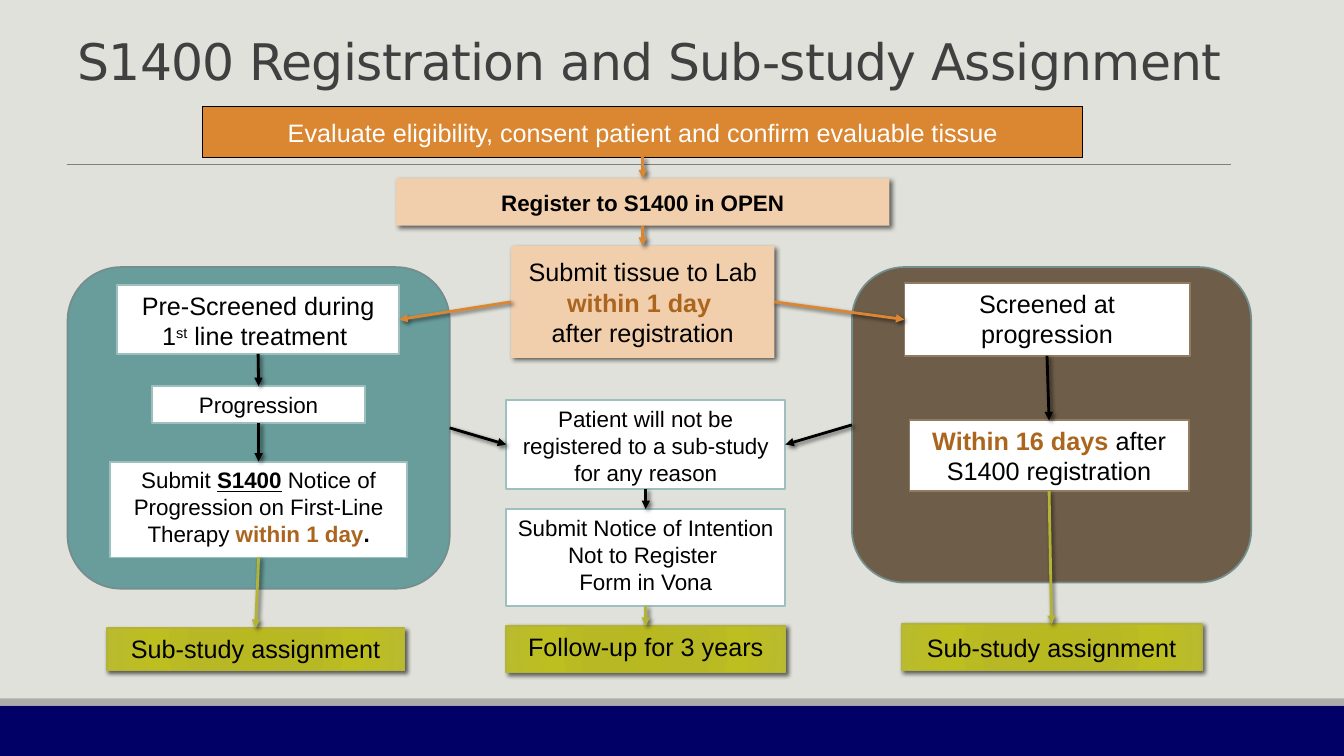
from pptx import Presentation
from pptx.dml.color import RGBColor
from pptx.enum.shapes import MSO_CONNECTOR, MSO_SHAPE
from pptx.enum.text import MSO_ANCHOR, PP_ALIGN
from pptx.oxml import parse_xml
from pptx.oxml.ns import nsdecls
from pptx.util import Pt

PX = 9144
TOP, LEFT, BOTTOM, RIGHT = range(4)
BLACK, WHITE, RUST = "000000", "FFFFFF", "AB651E"
ORANGE, PEACH, OLIVE, SEA, TAN = "DB8631", "F1CFAD", "B3B435", "9DBFBE", "927C61"
GREEN_STOPS = [(0, "B8B920"), (34, "B7B823"), (70, "BDBE20"), (100, "B9BA2F")]


def color(code):
    return RGBColor.from_string(code)


def add_shadow(properties, blur):
    properties.append(parse_xml(
        f'<a:effectLst {nsdecls("a")}><a:outerShdw blurRad="{Pt(blur)}" dist="{Pt(2)}" '
        'dir="2700000" algn="tl" rotWithShape="0"><a:srgbClr val="000000">'
        '<a:alpha val="60000"/></a:srgbClr></a:outerShdw></a:effectLst>'))


deck = Presentation()
deck.slide_width, deck.slide_height = 1333 * PX, 750 * PX
page = deck.slides.add_slide(deck.slide_layouts[5])
page.background.fill.solid()
page.background.fill.fore_color.rgb = color("E1E1DB")

title = page.shapes.title
title.left, title.top, title.width, title.height = 67 * PX, 21 * PX, 1225 * PX, 74 * PX
title.text_frame.text = "S1400 Registration and Sub-study Assignment"
title.text_frame.vertical_anchor = MSO_ANCHOR.BOTTOM
title.text_frame.word_wrap = True
para = title.text_frame.paragraphs[0]
para.alignment = PP_ALIGN.LEFT
para.line_spacing = 0.85
span = para.runs[0]
span.font.name, span.font.size = "DejaVu Sans", Pt(36)
span.font.color.rgb = color("404040")
span.font._element.set("spc", "-50")

rule = page.shapes.add_connector(MSO_CONNECTOR.STRAIGHT, 66 * PX, 163 * PX, 1221 * PX, 163 * PX)
rule.line.color.rgb = color("808080")
rule.line.width = Pt(0.5)
rule._element.spPr.append(parse_xml(f'<a:effectLst {nsdecls("a")}/>'))

RECT, ROUND = MSO_SHAPE.RECTANGLE, MSO_SHAPE.ROUNDED_RECTANGLE
panels = [
    ("footer", RECT, (0, 700, 1333, 50), "000066", None),
    ("footer edge", RECT, (0, 693, 1333, 7), "ACADA8", None),
    ("screened panel", ROUND, (845, 265, 396, 313), "6E5D49", "748D8D"),
    ("pre-screened panel", ROUND, (67, 265, 379, 319), "689D9B", "748D8D"),
]
nodes = {}
for name, kind, area, fill, edge in panels:
    panel = page.shapes.add_shape(kind, *[length * PX for length in area])
    panel.shadow.inherit = False
    panel.fill.solid()
    panel.fill.fore_color.rgb = color(fill)
    if edge:
        panel.line.color.rgb = color(edge)
        panel.line.width = Pt(1.25)
    else:
        panel.line.fill.background()
    nodes[name] = panel

styles = {
    "start": (ORANGE, BLACK, 0.75, 0),
    "step": (PEACH, None, 0, 3.5),
    "sea": (WHITE, SEA, 1.25, 0),
    "tan": (WHITE, TAN, 1.25, 0),
    "result": (None, OLIVE, 1, 3),
}
boxes = [
    ("evaluate", "start", (201, 106, 873, 50), 18, 10,
     [("Evaluate eligibility, consent patient and confirm evaluable tissue", "white")]),
    ("register", "step", (393, 177, 489, 47), 16, 10, [("Register to S1400 in OPEN", "bold")]),
    ("tissue", "step", (507, 244, 261, 111), 18, 10,
     [("Submit tissue to Lab ", ""), ("within 1 day \n", "bold rust"), ("after registration", "")]),
    ("screened result", "result", (894, 619, 298, 46), 18, 10, [("Sub-study assignment", "")]),
    ("16 days", "tan", (902, 417, 277, 70), 18, 5,
     [("Within 16 days ", "bold rust"), ("after S1400 registration", "")]),
    ("pre-screened", "sea", (116, 283, 280, 68), 18, 0,
     [("Pre-Screened during 1", ""), ("st", "super"), (" line treatment ", "")]),
    ("progression", "sea", (151, 383, 211, 37), 16, 0, [("Progression", "")]),
    ("notice", "sea", (109, 458, 295, 95), 16, 0,
     [("Submit ", ""), ("S1400", "bold underline"),
      (" Notice of Progression on First-Line Therapy ", ""),
      ("within 1 day", "bold rust"), (".", "bold")]),
    ("not registered", "sea", (502, 397, 277, 88), 16, 0,
     [("Patient will not be registered to a sub-study for any reason", "")]),
    ("intention", "sea", (502, 505, 277, 96), 16, 0,
     [("Submit Notice of Intention Not to Register \nForm in Vona", "")]),
    ("pre-screened result", "result", (106, 623, 295, 42), 18, 0, [("Sub-study assignment", "")]),
    ("screened", "tan", (897, 281, 283, 72), 18, 0, [("Screened at progression", "")]),
    ("follow-up", "result", (502, 621, 277, 46), 18, 0, [("Follow-up for 3 years", "")]),
]
for name, style, area, size, middle_inset, spans in boxes:
    fill, edge, weight, blur = styles[style]
    box = page.shapes.add_shape(RECT, *[length * PX for length in area])
    nodes[name] = box
    if fill:
        box.fill.solid()
        box.fill.fore_color.rgb = color(fill)
    else:
        stops = "".join(f'<a:gs pos="{place * 1000}"><a:srgbClr val="{code}"/></a:gs>'
                        for place, code in GREEN_STOPS)
        box._element.spPr.insert(2, parse_xml(
            f'<a:gradFill {nsdecls("a")} rotWithShape="1"><a:gsLst>{stops}</a:gsLst>'
            '<a:path path="circle"><a:fillToRect l="100000" t="100000" r="100000" b="100000"/>'
            '</a:path></a:gradFill>'))
    if edge:
        box.line.color.rgb = color(edge)
        box.line.width = Pt(weight)
    else:
        box.line.fill.background()
    if blur:
        add_shadow(box._element.spPr, blur)
    else:
        box.shadow.inherit = False
    frame = box.text_frame
    frame.word_wrap = True
    frame.margin_left = frame.margin_right = 10 * PX
    frame.margin_top = frame.margin_bottom = (middle_inset or 5) * PX
    frame.vertical_anchor = MSO_ANCHOR.MIDDLE if middle_inset else MSO_ANCHOR.TOP
    para = frame.paragraphs[0]
    para.alignment = PP_ALIGN.CENTER
    if not middle_inset:
        para.space_after = Pt(10)
    for text, look in spans:
        for number, line in enumerate(text.split("\n")):
            if number:
                para.add_line_break()
            if not line:
                continue
            span = para.add_run()
            span.text = line
            span.font.name, span.font.size = "Arial", Pt(size)
            span.font.bold = "bold" in look
            span.font.underline = "underline" in look
            span.font.color.rgb = color(
                RUST if "rust" in look else WHITE if "white" in look else BLACK)
            if "super" in look:
                span.font._element.set("baseline", "30000")

arrows = [
    ("evaluate", BOTTOM, "register", TOP, ORANGE),
    ("register", BOTTOM, "tissue", TOP, ORANGE),
    ("tissue", LEFT, "pre-screened", RIGHT, ORANGE),
    ("tissue", RIGHT, "screened", LEFT, ORANGE),
    ("pre-screened", BOTTOM, "progression", TOP, BLACK),
    ("progression", BOTTOM, "notice", TOP, BLACK),
    ("notice", BOTTOM, "pre-screened result", TOP, OLIVE),
    ("screened", BOTTOM, "16 days", TOP, BLACK),
    ("16 days", BOTTOM, "screened result", TOP, OLIVE),
    ("pre-screened panel", RIGHT, "not registered", LEFT, BLACK),
    ("screened panel", LEFT, "not registered", RIGHT, BLACK),
    ("not registered", BOTTOM, "intention", TOP, BLACK),
    ("intention", BOTTOM, "follow-up", TOP, OLIVE),
]
for source, source_side, target, target_side, ink in arrows:
    arrow = page.shapes.add_connector(MSO_CONNECTOR.STRAIGHT, 0, 0, 0, 0)
    arrow.begin_connect(nodes[source], source_side)
    arrow.end_connect(nodes[target], target_side)
    arrow.line.color.rgb = color(ink)
    arrow.line.width = Pt(2)
    arrow.line._get_or_add_ln().append(parse_xml(f'<a:tailEnd {nsdecls("a")} type="triangle"/>'))
    add_shadow(arrow._element.spPr, 3)

deck.save("out.pptx")
